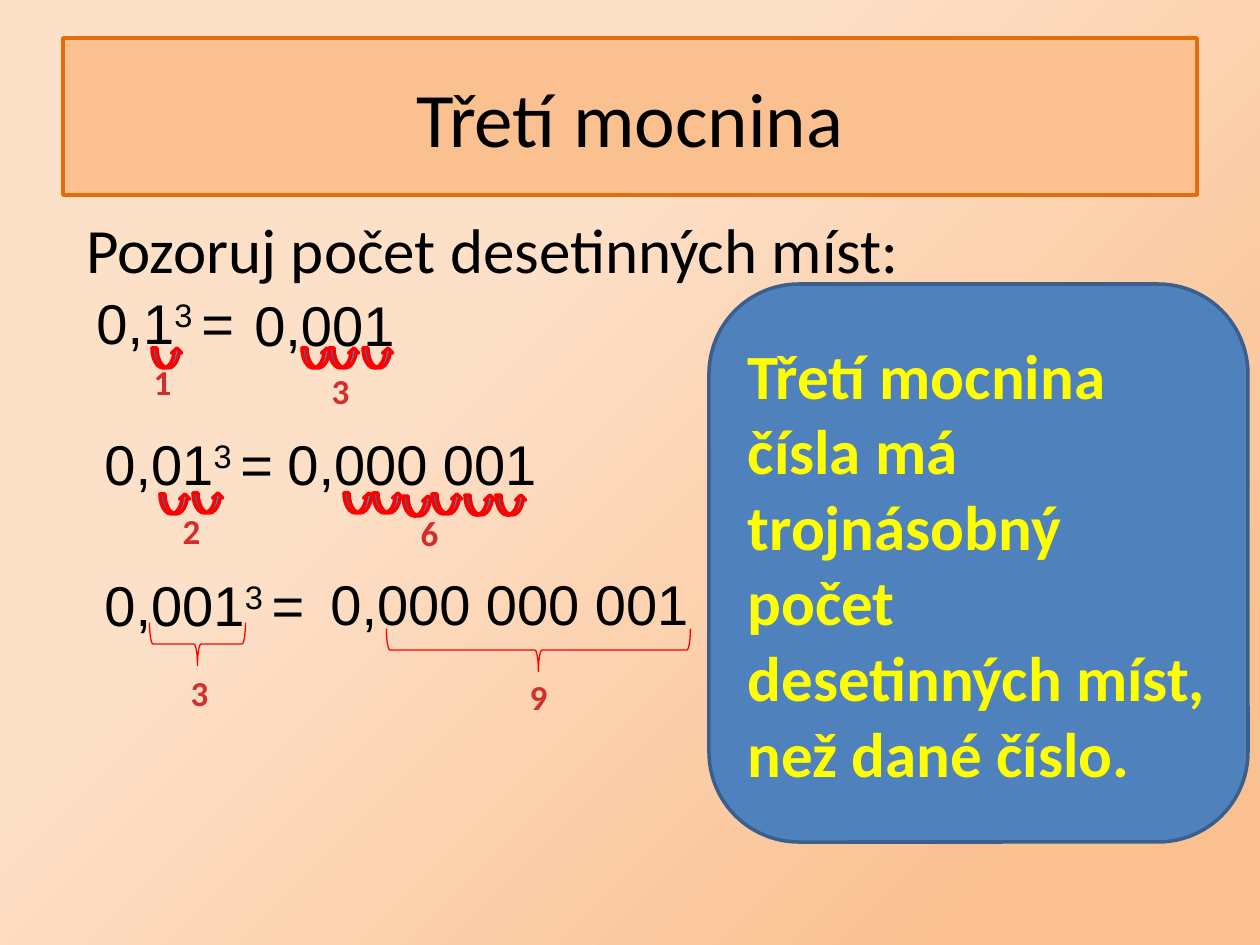
from pptx import Presentation, util as u
from pptx.dml.color import RGBColor
from pptx.enum import shapes, text
from lxml import etree

PX = 914400 / 126
COLORS = {"pale": "FDE0C8", "peach": "FAC090", "orange": "E46C0A", "black": "000000",
          "blue": "4F81BD", "navy": "3A5F8C", "red": "FF0000", "label": "D02F2C",
          "yellow": "FFFF00"}
SHAPE = shapes.MSO_SHAPE
CENTER, LEFT = text.PP_ALIGN.CENTER, text.PP_ALIGN.LEFT


def rgb(name):
    return RGBColor.from_string(COLORS[name])


def add(box, runs=(), kind=None, fill=None, line=None, width=2, align=LEFT,
        wrap=False, **font):
    """Add a text box, or a preset shape when kind is given."""
    box = [round(v * PX) for v in box]
    if kind is None:
        sp = s.shapes.add_textbox(*box)
    else:
        sp = s.shapes.add_shape(kind, *box)
        sp.shadow.inherit = False
        sp.line.color.rgb = rgb(line)
        sp.line.width = u.Pt(width)
        if fill:
            sp.fill.solid()
            sp.fill.fore_color.rgb = rgb(fill)
        else:
            sp.fill.background()
    tf = sp.text_frame
    tf.word_wrap = wrap
    if kind is None:
        tf.auto_size = text.MSO_AUTO_SIZE.SHAPE_TO_FIT_TEXT
    else:
        tf.vertical_anchor = text.MSO_ANCHOR.MIDDLE
    p = tf.paragraphs[0]
    p.alignment = align
    fmt = {"name": "Calibri", "size": u.Pt(36), "bold": False, **font}
    color = fmt.pop("color", "black")
    for i, content in enumerate(runs):
        if content == "\v":
            p.add_line_break()
            continue
        r = p.add_run()
        r.text = content
        r.font.color.rgb = rgb(color)
        for key, value in fmt.items():
            setattr(r.font, key, value)
        if content == "3 ":  # exponent
            r.font._element.set("baseline", "30000")
    return sp


prs = Presentation()
prs.slide_width, prs.slide_height = u.Inches(10), u.Inches(7.5)
s = prs.slides.add_slide(prs.slide_layouts[6])

# Background gradient, top left to bottom right
bg = s.background.fill
bg.gradient()
bg.gradient_angle = 315
for stop, (pos, name) in zip(bg.gradient_stops, [(0.36, "pale"), (0.86, "peach")]):
    stop.position = pos
    stop.color.rgb = rgb(name)

# Title
sp = add((63, 38, 1134, 157), ["Třetí mocnina"], SHAPE.ROUNDED_RECTANGLE, "peach",
         "orange", align=CENTER, wrap=True, size=u.Pt(44))
sp.adjustments[0] = 0

# Counts of decimal places
for x, y, digit in [(141, 354, "1"), (319, 363, "3"), (170, 503, "2"),
                    (408, 505, "6"), (178, 665, "3"), (517, 669, "9")]:
    add((x, y, 43, 55), [digit], align=CENTER, size=u.Pt(20), bold=True, color="label")

# Arrows hopping over each decimal place
for x, y in [(152, 348), (302, 348), (329, 348), (363, 348),
             (160, 494), (193, 493), (344, 493), (373, 493),
             (403, 496), (432, 494), (465, 495), (496, 495)]:
    add((x, y, 30, 20), kind=SHAPE.CURVED_UP_ARROW, fill="blue", line="red")

# Powers and their results
arial = {"name": "Arial", "size": u.Pt(32)}
for base, x, y, w, result, rx, ry, rw in [
        ("0,1", 84, 282, 169, "0,001", 242, 284, 166),
        ("0,01", 92, 423, 200, "0,000 001", 275, 423, 292),
        ("0,001", 92, 564, 231, "0,000 000 001", 318, 563, 386)]:
    add((x, y, w, 81), [base, "3 ", "="], **arial)
    add((rx, ry, rw, 81), [result], **arial)

# Instruction
add((74, 204, 1097, 89), ["Pozoruj počet desetinných míst:"], wrap=True)

# Braces under the last row
for x, y, h in [(176, 596, 96), (517, 498, 304)]:
    sp = add((x, y, 43, h), kind=SHAPE.LEFT_BRACE, line="red", width=0.75)
    sp.rotation = 270

# Rule
add((709, 284, 539, 558),
    ["Třetí mocnina čísla má trojnásobný ", "\v", "počet desetinných míst, než dané číslo."],
    SHAPE.ROUNDED_RECTANGLE, "blue", "navy", wrap=True, bold=True, color="yellow")

prs.save("out.pptx")
